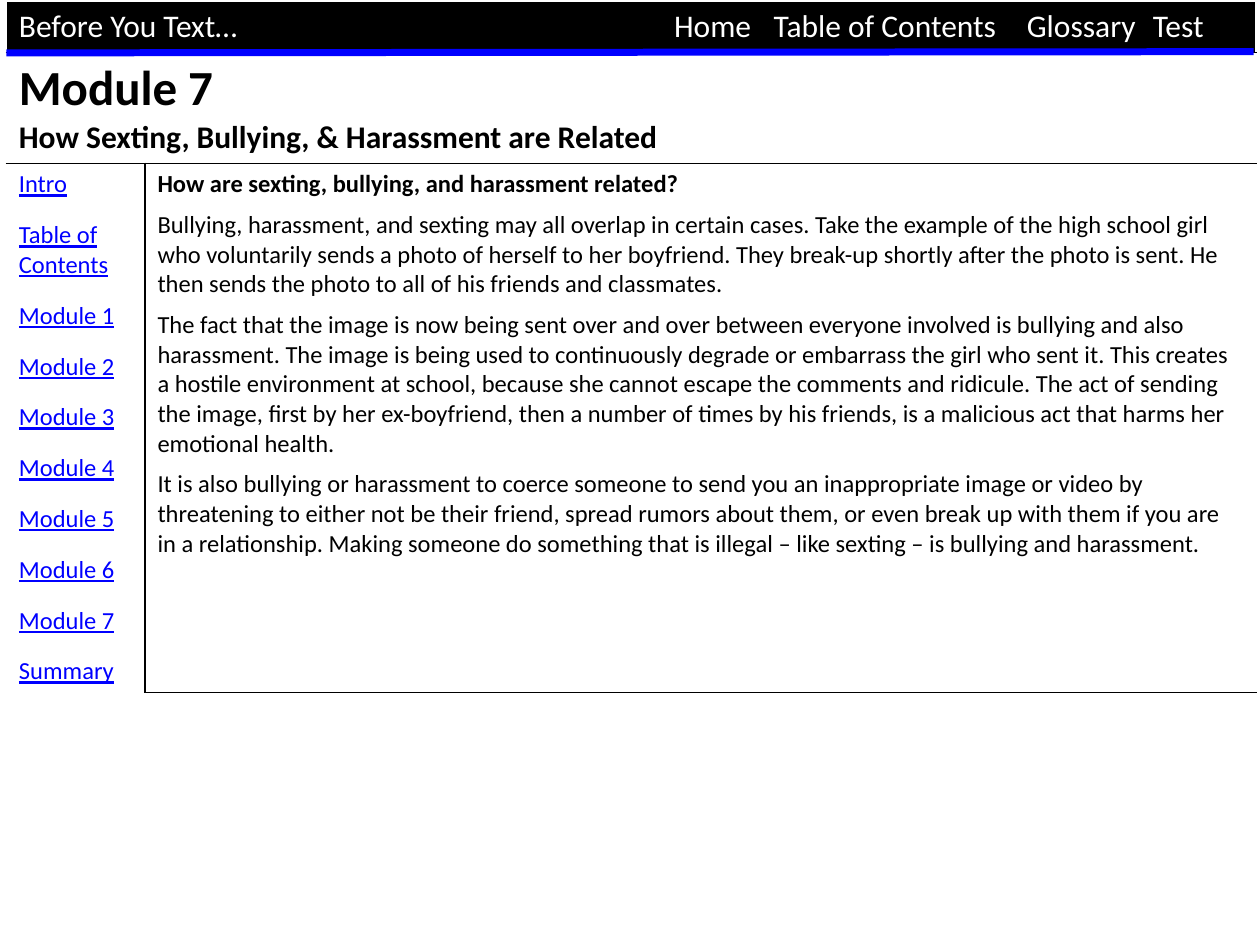
from lxml.etree import SubElement
from pptx import Presentation
from pptx.dml.color import RGBColor
from pptx.enum.shapes import MSO_CONNECTOR
from pptx.oxml.ns import qn
from pptx.util import Inches, Pt

COLORS = {"black": "000000", "white": "FFFFFF", "blue": "0000FF"}


def add_line(cell, text, size, color="black", bold=False, underline=False, before=0):
    """Write text into the cell's empty first paragraph, or into a new one."""
    frame = cell.text_frame
    para = frame.paragraphs[0] if not frame.text else frame.add_paragraph()
    para.space_before = Pt(before)
    span = para.add_run()
    span.text = text
    span.font.name = "Calibri"
    span.font.size = Pt(size)
    span.font.bold = bold
    span.font.underline = underline
    span.font.color.rgb = RGBColor.from_string(COLORS[color])
    return para


def style_cell(cell, left, right, top, bottom, fill=None):
    """Draw the four borders, then the fill."""
    properties = cell._tc.get_or_add_tcPr()
    for side, color in zip("LRTB", (left, right, top, bottom)):
        border = SubElement(properties, qn(f"a:ln{side}"), w=str(Pt(1)))
        solid = SubElement(border, qn("a:solidFill"))
        SubElement(solid, qn("a:srgbClr"), val=COLORS[color])
    if fill:
        cell.fill.solid()
        cell.fill.fore_color.rgb = RGBColor.from_string(COLORS[fill])
    else:
        cell.fill.background()


deck = Presentation()
deck.slide_width, deck.slide_height = Inches(10), Inches(7.5)
page = deck.slides.add_slide(deck.slide_layouts[6])

# Page grid
columns = [1.1, 8.82]
rows = [0.39, 0.88, 4.2]
table = page.shapes.add_table(
    len(rows), len(columns), Inches(0.05), Inches(0.01),
    Inches(sum(columns)), Inches(sum(rows))).table
for column, width in zip(table.columns, columns):
    column.width = Inches(width)
for row, height in zip(table.rows, rows):
    row.height = Inches(height)
for index in (0, 1):
    table.cell(index, 0).merge(table.cell(index, 1))

for cell in table.rows[0].cells:
    style_cell(cell, "white", "white", "white", "black", "black")
for cell in table.rows[1].cells:
    style_cell(cell, "white", "white", "black", "black")
menu, content = table.rows[2].cells
style_cell(menu, "white", "black", "black", "white")
style_cell(content, "black", "white", "black", "black")

# Top bar, its entries set on tab stops
entries = ["Before You Text…", "Home", "Table of Contents", "Glossary", "Test"]
stops = [5.2, 5.99, 8, 9]
bar = add_line(table.cell(0, 0), entries[0], 18, "white")
tab_list = SubElement(bar._p.get_or_add_pPr(), qn("a:tabLst"))
for stop in stops:
    SubElement(tab_list, qn("a:tab"), pos=str(Inches(stop)), algn="l")
bar.runs[0].text = "\t".join(entries)

# Module heading
heading = table.cell(1, 0)
add_line(heading, "Module 7", 28, bold=True)
add_line(heading, "How Sexting, Bullying, & Harassment are Related", 18, bold=True)

# Side menu
modules = [f"Module {number}" for number in range(1, 8)]
for label in ["Intro", "Table of Contents", *modules, "Summary"]:
    add_line(menu, label, 14, "blue", underline=True, before=12)

# Main text
add_line(content, "How are sexting, bullying, and harassment related?", 14, bold=True)
for text in (
    "Bullying, harassment, and sexting may all overlap in certain cases. Take the "
    "example of the high school girl who voluntarily sends a photo of herself to her "
    "boyfriend. They break-up shortly after the photo is sent. He then sends the photo "
    "to all of his friends and classmates.",
    "The fact that the image is now being sent over and over between everyone involved "
    "is bullying and also harassment. The image is being used to continuously degrade "
    "or embarrass the girl who sent it. This creates a hostile environment at school, "
    "because she cannot escape the comments and ridicule. The act of sending the image, "
    "first by her ex-boyfriend, then a number of times by his friends, is a malicious "
    "act that harms her emotional health.",
    "It is also bullying or harassment to coerce someone to send you an inappropriate "
    "image or video by threatening to either not be their friend, spread rumors about "
    "them, or even break up with them if you are in a relationship. Making someone do "
    "something that is illegal – like sexting – is bullying and harassment.",
):
    add_line(content, text, 14, before=6)

# Blue rule under the top bar
rule = page.shapes.add_connector(
    MSO_CONNECTOR.STRAIGHT, Inches(0.05), Inches(0.42), Inches(9.95), Inches(0.41))
rule.line.color.rgb = RGBColor.from_string(COLORS["blue"])
rule.line.width = Pt(4)
SubElement(rule._element.spPr, qn("a:effectLst"))

deck.save("out.pptx")
